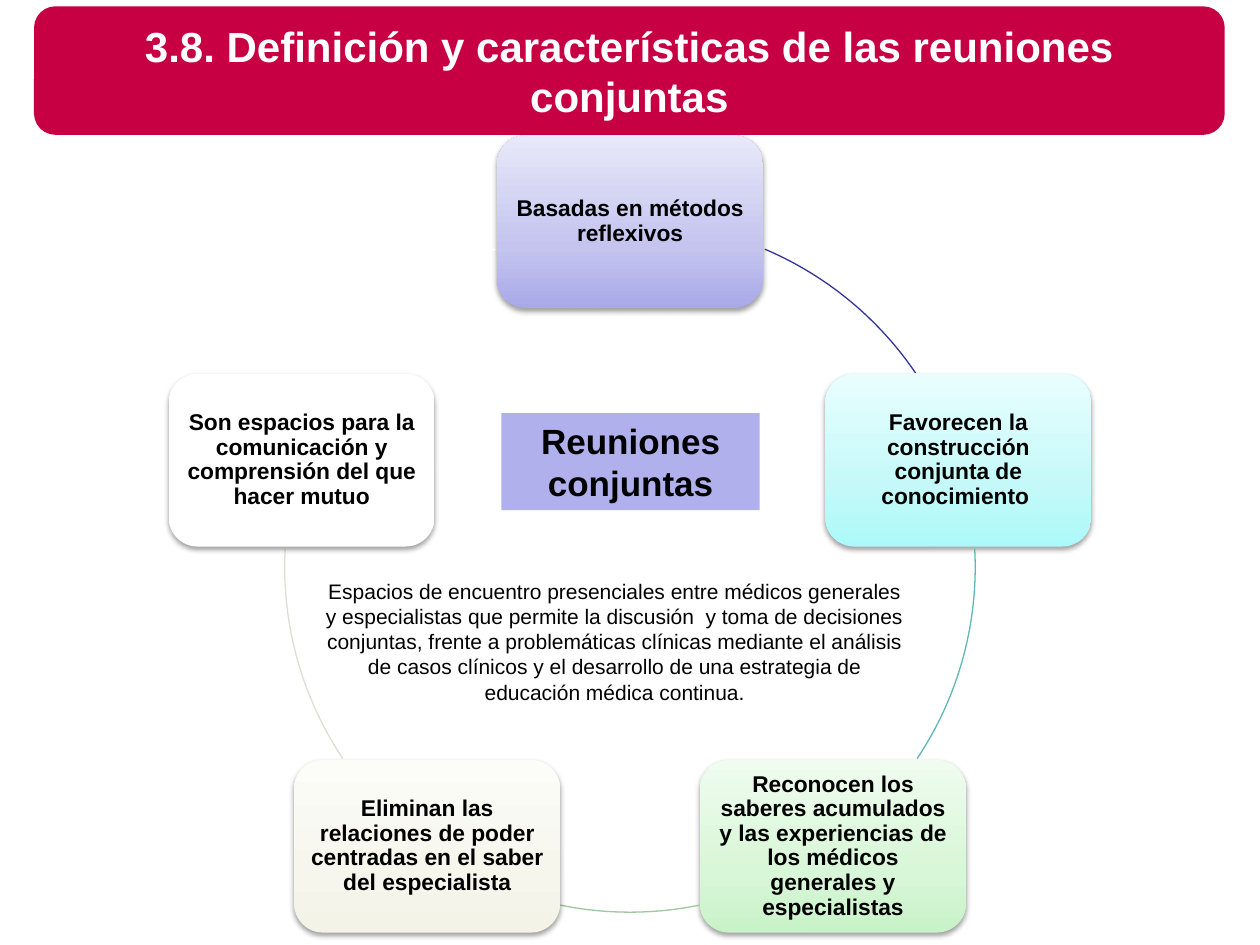
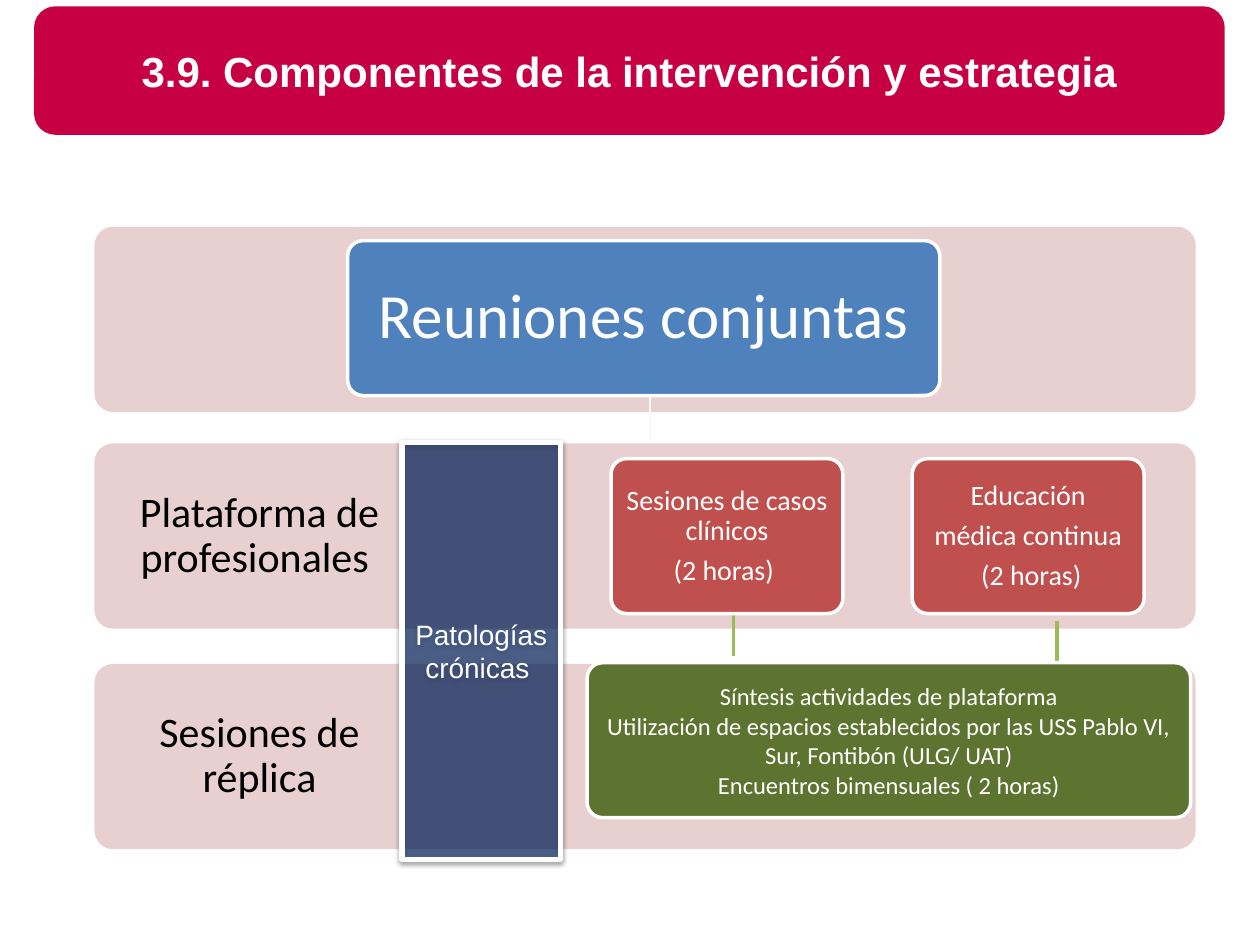
from copy import deepcopy
from math import cos, sin, radians

from pptx import Presentation
from pptx.dml.color import RGBColor as RGB
from pptx.enum.shapes import MSO_CONNECTOR as LINK, MSO_SHAPE as KIND
from pptx.enum.text import MSO_ANCHOR as ANCHOR, PP_ALIGN as ALIGN
from pptx.oxml.xmlchemy import OxmlElement as Node
from pptx.util import Inches, Pt

W, H = 10, 7.5

HUES = {
    "title": "C70044", "white": "FFFFFF", "black": "000000",
    "hub": "B0B0EC", "band": "E8D0D0", "blue": "4F81BD", "red": "C0504D",
    "olive": "5D7430", "green": "9BBB59", "navy": "002060", "pale": "F9F9F9",
}

# Slide 1: text, gradient from bottom to top, colour of the arc that follows
RING_TITLE = "3.8. Definición y características de las reuniones conjuntas"
RING = [
    ("Basadas en métodos reflexivos",
     ("A9A9E9", "C4C4EF", "E8E8FA"), "333399"),
    ("Favorecen la construcción conjunta de conocimiento ",
     ("ACF9F9", "C5F9F9", "E8FEFE"), "61B7B7"),
    ("Reconocen los saberes acumulados y las experiencias de los médicos "
     "generales y especialistas",
     ("C8F3C8", "D8F6D8", "EFFCEF"), "9FC69F"),
    ("Eliminan las relaciones de poder centradas en el saber del especialista",
     ("F3F3E7", "F6F6ED", "FCFCF8"), "DEDED4"),
    ("Son espacios para la comunicación y comprensión del que hacer mutuo",
     ("FFFFFF",) * 3, "FFFFFF"),
]
ARCS = [(293, 325.8), (357, 33.7), (78.4, 101.6), (146.3, 183), (214.2, 247)]
HUB = "Reuniones conjuntas"
NOTE = ("Espacios de encuentro presenciales entre médicos generales y "
        "especialistas que permite la discusión  y toma de decisiones "
        "conjuntas, frente a problemáticas clínicas mediante el análisis de "
        "casos clínicos y el desarrollo de una estrategia de educación médica "
        "continua.")

# Slide 2: bands as (top, label); cards as (left, top, width, hue, size, inset, lines)
PLAN_TITLE = "3.9. Componentes de la intervención y estrategia"
BANDS = [(5.27, "Sesiones de réplica"), (3.52, "Plataforma de profesionales "),
         (1.8, "")]
CARDS = [
    (2.76, 1.91, 4.7, "blue", 36, 0.15, ["Reuniones conjuntas"]),
    (4.85, 3.64, 1.84, "red", 16, 0.07,
     ["Sesiones de casos clínicos", "(2 horas) "]),
    (7.24, 3.64, 1.84, "red", 16, 0.07,
     ["Educación", "médica continua", " (2 horas)"]),
    (4.66, 5.26, 4.79, "olive", 14, 0.06,
     ["Síntesis actividades de plataforma",
      "Utilización de espacios establecidos por las USS Pablo VI,",
      "Sur, Fontibón (ULG/ UAT)",
      "Encuentros bimensuales ( 2 horas)"]),
]
STEMS = [(5.16, 3.14, 3.49, "pale", 0.75), (5.82, 4.87, 5.21, "green", 2),
         (8.39, 4.93, 5.25, "green", 2.25)]
ELBOW = [(5.11, 3.14), (5.11, 3.31), (6.79, 3.31), (6.79, 3.49)]
PILLAR = "Patologías crónicas "


def tint(name):
    return RGB.from_string(HUES.get(name, name))


def rim(item, hue, width):
    item.line.color.rgb = tint(hue)
    item.line.width = Pt(width)


def box(slide, kind, at, fill=None, adj=None):
    """Add a shape with no line and no shadow."""
    item = slide.shapes.add_shape(kind, *map(Inches, at))
    item.shadow.inherit = False
    item.line.fill.background()
    if fill:
        item.fill.solid()
        item.fill.fore_color.rgb = tint(fill)
    else:
        item.fill.background()
    if adj:
        item.adjustments[0] = adj
    return item


def write(item, lines, size, hue="black", font="Arial", bold=False,
          inset=(0.1, 0.05, 0.1, 0.05), anchor=ANCHOR.MIDDLE,
          space=None, after=0):
    """Fill a shape with centred paragraphs; after is a share of the size."""
    frame = item.text_frame
    frame.word_wrap = True
    frame.vertical_anchor = anchor
    (frame.margin_left, frame.margin_top,
     frame.margin_right, frame.margin_bottom) = map(Inches, inset)
    frame.text = "\n".join(lines)
    for para in frame.paragraphs:
        para.alignment = ALIGN.CENTER
        para.space_after = Pt(size * after)
        if space:
            para.line_spacing = space
        for run in para.runs:
            run.font.size, run.font.name = Pt(size), font
            run.font.bold = bold
            run.font.color.rgb = tint(hue)


def drop(item):
    """Give a shape a soft shadow that falls straight down."""
    shade = Node("a:outerShdw")
    for key, val in (("blurRad", Pt(3.1)), ("dist", Pt(1.6)),
                     ("dir", 90 * 60000), ("rotWithShape", 0)):
        shade.set(key, str(val))
    color = Node("a:srgbClr")
    color.set("val", HUES["black"])
    shade.append(color)
    fade(color, 38)
    item._element.spPr.find(
        "{http://schemas.openxmlformats.org/drawingml/2006/main}effectLst"
    ).append(shade)


def fade(color, share):
    alpha = Node("a:alpha")
    alpha.set("val", str(share * 1000))
    color.append(alpha)


def blend(item, hues):
    """Fill a shape with a three-stop gradient that runs upwards."""
    item.fill.gradient()
    item.fill.gradient_angle = 90
    first = item.fill.gradient_stops[0]._gs
    first.addnext(deepcopy(first))
    for stop, spot, hue in zip(item.fill.gradient_stops, (0, 0.35, 1), hues):
        stop.position = spot
        stop.color.rgb = tint(hue)


def start(deck, title):
    """Add a blank slide with the title band."""
    slide = deck.slides.add_slide(deck.slide_layouts[6])
    band = box(slide, KIND.ROUNDED_RECTANGLE, (0.27, 0.05, 9.45, 1.02), "title")
    write(band, [title], 24, "white", bold=True)
    return slide


def ring(deck):
    slide = start(deck, RING_TITLE)
    mid, axis, rad = W / 2, H * 0.6, 2.74
    wide, high = 2.11, 1.37
    for i, ((text, hues, line), ends) in enumerate(zip(RING, ARCS)):
        turn = radians(360 / len(RING) * i - 90)
        left = mid + rad * cos(turn) - wide / 2
        top = axis + rad * sin(turn) - high / 2
        card = box(slide, KIND.ROUNDED_RECTANGLE, (left, top, wide, high))
        blend(card, hues)
        drop(card)
        write(card, [text], 13, bold=True, inset=(0.05,) * 4, space=0.9,
              after=0.35)
        arc = box(slide, KIND.ARC, (mid - rad, axis - rad, 2 * rad, 2 * rad))
        for n, angle in enumerate(ends):
            arc.adjustments[n] = angle * 0.6  # 60000 units a degree
        rim(arc, line, 0.75)
    hub = box(slide, KIND.RECTANGLE, (3.98, 3.28, 2.05, 0.77), "hub")
    write(hub, [HUB], 20, bold=True, anchor=ANCHOR.TOP)
    note = slide.shapes.add_textbox(*map(Inches, (2.48, 4.54, 4.8, 1.35)))
    write(note, [NOTE], 12, anchor=ANCHOR.TOP)


def plan(deck):
    slide = start(deck, PLAN_TITLE)
    for top, label in BANDS:
        band = box(slide, KIND.ROUNDED_RECTANGLE, (0.75, top, 8.74, 1.47),
                   "band", 0.1)
        if label:
            write(band, [label], 24, font="Calibri", space=0.9, after=0.35,
                  inset=(0.19, 0.19, 6.31, 0.19))
    for x, top, end, hue, width in STEMS:
        stem = slide.shapes.add_connector(
            LINK.STRAIGHT, *map(Inches, (x, top, x, end)))
        rim(stem, hue, width)
        stem._element.spPr.append(Node("a:effectLst"))
    pen = slide.shapes.build_freeform(*ELBOW[0], scale=Inches(1))
    pen.add_line_segments(ELBOW[1:], close=False)
    elbow = pen.convert_to_shape()
    elbow.shadow.inherit = False
    elbow.fill.background()
    rim(elbow, "pale", 0.75)
    for left, top, wide, hue, size, inset, lines in CARDS:
        card = box(slide, KIND.ROUNDED_RECTANGLE, (left, top, wide, 1.23),
                   hue, 0.1)
        rim(card, "white", 2)
        loose = hue == "olive"
        write(card, lines, size, "white", "Calibri", inset=(inset,) * 4,
              space=None if loose else 0.9, after=0 if loose else 0.35)
    pillar = box(slide, KIND.RECTANGLE, (3.19, 3.51, 1.26, 3.31), "navy")
    fade(pillar.fill._xPr.solidFill.srgbClr
         if hasattr(pillar.fill._xPr, "solidFill")
         else pillar.fill._xPr.xpath("a:solidFill/a:srgbClr")[0], 62)
    rim(pillar, "white", 3)
    drop(pillar)
    write(pillar, [PILLAR], 16, "white")


def main():
    deck = Presentation()
    deck.slide_width, deck.slide_height = Inches(W), Inches(H)
    ring(deck)
    plan(deck)
    deck.save("out.pptx")


if __name__ == "__main__":
    main()
